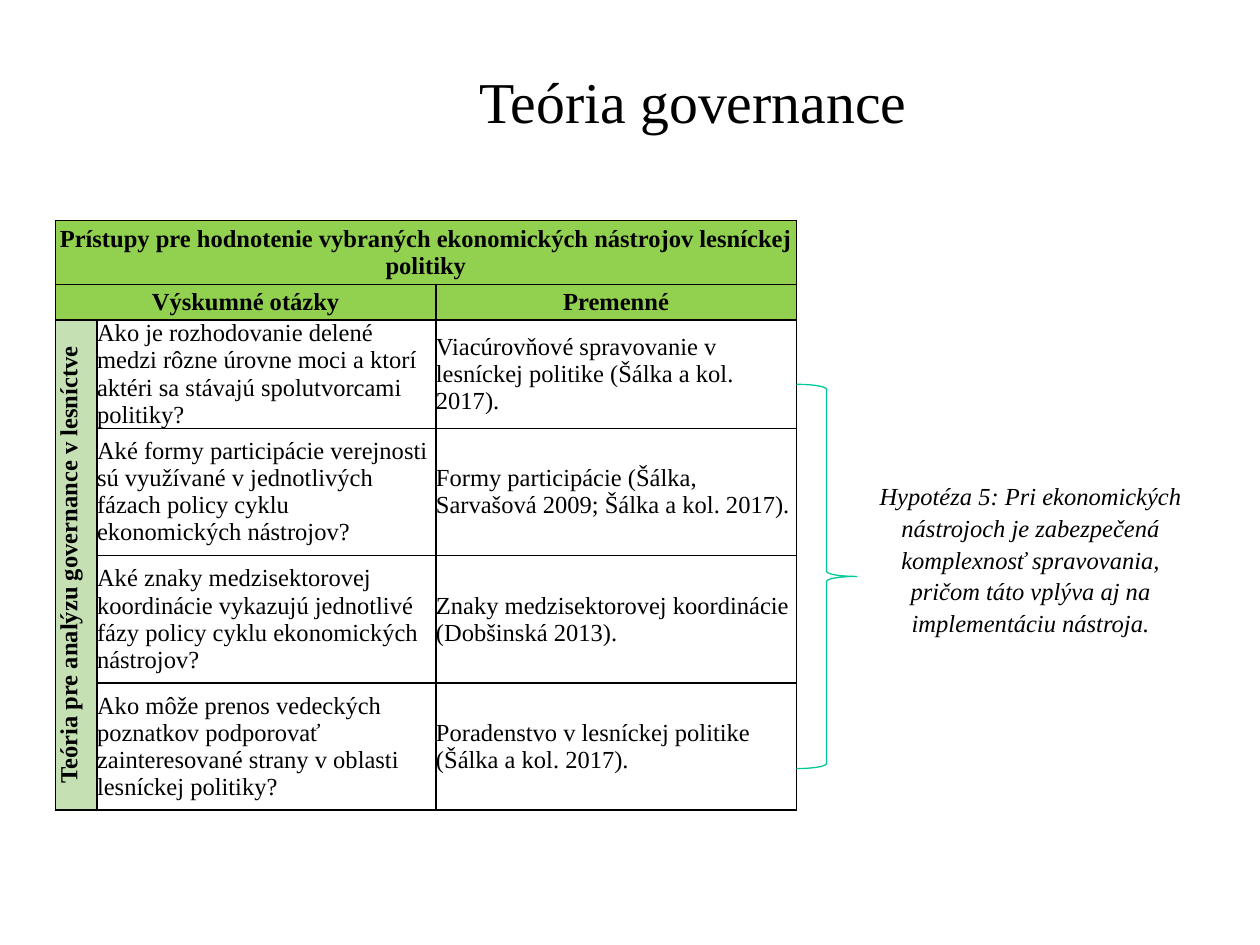
from lxml import etree
from pptx import Presentation
from pptx.dml.color import RGBColor
from pptx.enum.shapes import MSO_SHAPE
from pptx.enum.text import MSO_ANCHOR, MSO_AUTO_SIZE, PP_ALIGN
from pptx.oxml.ns import qn
from pptx.util import Inches, Pt

CENTER, LEFT = PP_ALIGN.CENTER, PP_ALIGN.LEFT
TOP, MIDDLE = MSO_ANCHOR.TOP, MSO_ANCHOR.MIDDLE
GROW = MSO_AUTO_SIZE.SHAPE_TO_FIT_TEXT
NO_AUTOFIT = MSO_AUTO_SIZE.NONE
BRACE = MSO_SHAPE.RIGHT_BRACE

FONT = "Times New Roman"
COLORS = {
    "text": "000000",
    "border": "000000",
    "header": "92D050",
    "theory": "C5E0B3",
    "brace": "00C896",
}

TITLE = "Teória governance"
HEADING = "Prístupy pre hodnotenie vybraných ekonomických nástrojov lesníckej politiky"
COLUMN_HEADINGS = ("Výskumné otázky", "Premenné")
THEORY = "Teória pre analýzu governance v lesníctve"
QUESTIONS = [
    (
        "Ako je rozhodovanie delené medzi rôzne úrovne moci a ktorí aktéri sa stávajú spolutvorcami politiky?",
        "Viacúrovňové spravovanie v lesníckej politike (Šálka a kol. 2017).",
    ),
    (
        "Aké formy participácie verejnosti sú využívané v jednotlivých fázach policy cyklu ekonomických nástrojov?",
        "Formy participácie (Šálka, Sarvašová 2009; Šálka a kol. 2017).",
    ),
    (
        "Aké znaky medzisektorovej koordinácie vykazujú jednotlivé fázy policy cyklu ekonomických nástrojov?",
        "Znaky medzisektorovej koordinácie (Dobšinská 2013).",
    ),
    (
        "Ako môže prenos vedeckých poznatkov podporovať zainteresované strany v oblasti lesníckej politiky?",
        "Poradenstvo v lesníckej politike (Šálka a kol. 2017).",
    ),
]
HYPOTHESIS = (
    "Hypotéza 5: Pri ekonomických nástrojoch je zabezpečená komplexnosť spravovania, "
    "pričom táto vplýva aj na implementáciu nástroja."
)

COLUMN_WIDTHS = [0.33, 2.69, 2.86]
ROW_HEIGHTS = [0.51, 0.28, 0.86] + [1.01] * 3


def color(name):
    return RGBColor.from_string(COLORS[name])


def write(text_frame, text, size=14, align=LEFT, bold=False, italic=False):
    paragraph = text_frame.paragraphs[0]
    paragraph.alignment = align
    run = paragraph.add_run()
    run.text = text
    font = run.font
    font.name, font.size = FONT, Pt(size)
    font.bold, font.italic = bold, italic
    font.color.rgb = color("text")
    return paragraph


def add_title(slide):
    title = slide.shapes.title
    title.left, title.top = Inches(1), Inches(0.41)
    title.width, title.height = Inches(9), Inches(0.94)
    frame = title.text_frame
    frame.auto_size = NO_AUTOFIT
    frame.vertical_anchor = TOP
    frame.margin_top = Inches(0.11)
    write(frame, TITLE, size=33, align=CENTER)


def set_borders(cell):
    properties = cell._tc.get_or_add_tcPr()
    for index, side in enumerate(("a:lnL", "a:lnR", "a:lnT", "a:lnB")):
        line = etree.Element(qn(side), w=str(Pt(1)))
        fill = etree.SubElement(line, qn("a:solidFill"))
        etree.SubElement(fill, qn("a:srgbClr"), val=COLORS["border"])
        properties.insert(index, line)


def format_cell(cell):
    cell.margin_left = cell.margin_right = 0
    cell.margin_top = cell.margin_bottom = 0
    cell.vertical_anchor = MIDDLE
    cell.fill.background()
    set_borders(cell)


def fill_heading(cell, text, fill):
    cell.fill.solid()
    cell.fill.fore_color.rgb = color(fill)
    write(cell.text_frame, text, align=CENTER, bold=True)


def add_theory_table(slide):
    table = slide.shapes.add_table(
        len(ROW_HEIGHTS), len(COLUMN_WIDTHS), Inches(0.44), Inches(1.75),
        Inches(sum(COLUMN_WIDTHS)), Inches(sum(ROW_HEIGHTS)),
    ).table
    table.first_row = table.horz_banding = False
    for column, width in zip(table.columns, COLUMN_WIDTHS):
        column.width = Inches(width)
    for row, height in zip(table.rows, ROW_HEIGHTS):
        row.height = Inches(height)
    for cell in table.iter_cells():
        format_cell(cell)

    table.cell(0, 0).merge(table.cell(0, 2))
    table.cell(1, 0).merge(table.cell(1, 1))
    table.cell(2, 0).merge(table.cell(5, 0))

    fill_heading(table.cell(0, 0), HEADING, "header")
    for column, text in zip((0, 2), COLUMN_HEADINGS):
        fill_heading(table.cell(1, column), text, "header")
    theory = table.cell(2, 0)
    fill_heading(theory, THEORY, "theory")
    theory._tc.get_or_add_tcPr().set("vert", "vert270")

    for row, texts in enumerate(QUESTIONS, start=2):
        for column, text in enumerate(texts, start=1):
            write(table.cell(row, column).text_frame, text)


def add_hypothesis(slide):
    box = slide.shapes.add_textbox(Inches(6.8), Inches(3.75), Inches(2.76), Inches(1.28))
    frame = box.text_frame
    frame.word_wrap = True
    frame.auto_size = GROW
    paragraph = write(frame, HYPOTHESIS, align=CENTER, italic=True)
    paragraph.line_spacing = 1.08


def add_brace(slide):
    brace = slide.shapes.add_shape(BRACE, Inches(6.32), Inches(3.05), Inches(0.48), Inches(3.05))
    brace.shadow.inherit = False
    brace.fill.background()
    brace.line.color.rgb = color("brace")
    brace.line.width = Pt(0.75)


def main():
    presentation = Presentation()
    presentation.slide_width, presentation.slide_height = Inches(10), Inches(7.5)
    slide = presentation.slides.add_slide(presentation.slide_layouts.get_by_name("Title Only"))
    add_title(slide)
    add_theory_table(slide)
    add_hypothesis(slide)
    add_brace(slide)
    presentation.save("out.pptx")


if __name__ == "__main__":
    main()
